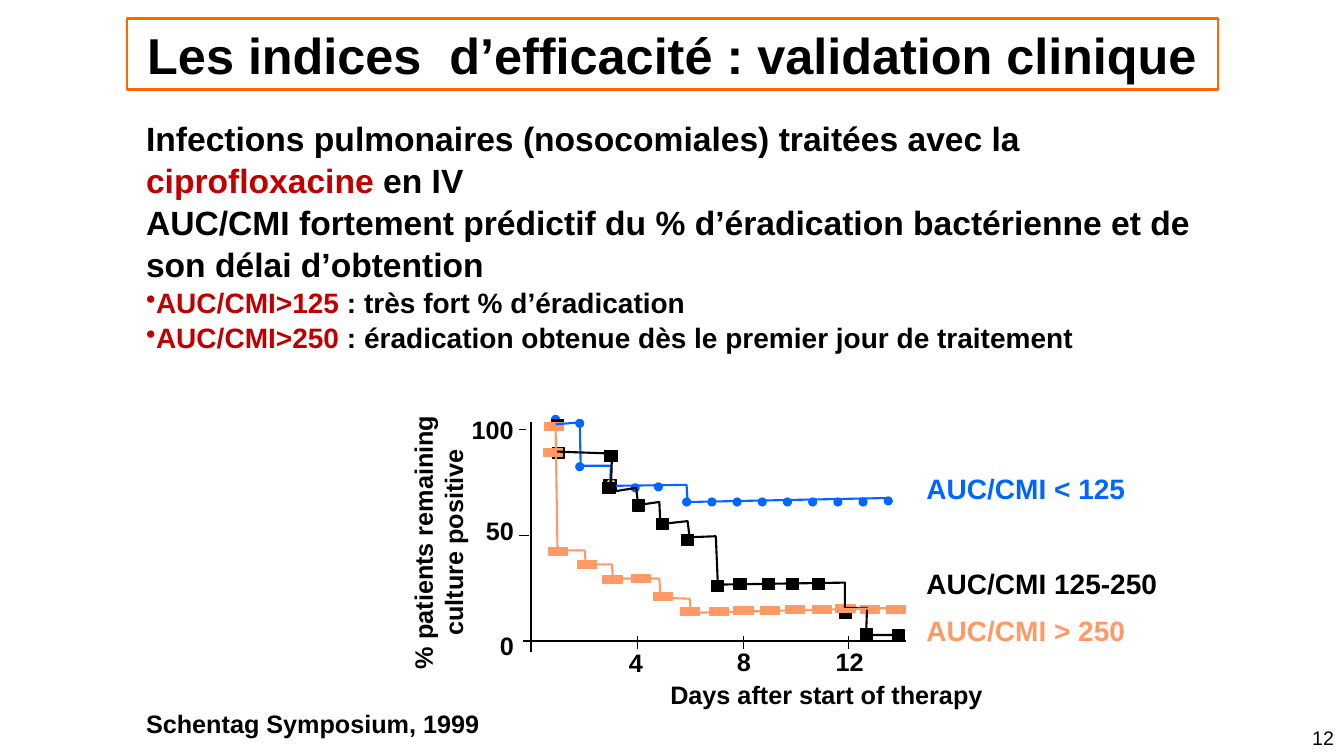
from dataclasses import dataclass
from lxml import etree
from pptx import Presentation
from pptx.dml.color import RGBColor
from pptx.enum.shapes import MSO_CONNECTOR, MSO_SHAPE
from pptx.enum.text import MSO_ANCHOR, PP_ALIGN
from pptx.oxml.ns import qn
from pptx.util import Pt

PX = 9144  # EMU per px, 100 px to the inch


@dataclass(frozen=True)
class Theme:
    font: str = "Arial"
    ink: str = "000000"
    paper: str = "FFFFFF"
    frame: str = "FF6600"
    accent: str = "C00000"
    low: str = "0066FF"
    high: str = "FF9966"
    stray: str = "FBDF53"
    title: int = 36
    body: int = 24
    bullet: int = 20
    legend: int = 20
    label: int = 18
    number: int = 14


THEME = Theme()

# Chart points, in px right of and above the origin of the axes
LOW_STEPS = [(24, 215), (48, 217), (49, 174), (79, 174), (78, 154), (154, 155),
             (155, 138), (355, 142)]
MIDDLE_STEPS = [(25, 188), (80, 186), (79, 148), (104, 152), (106, 135), (127, 138),
                (128, 116), (155, 119), (157, 103), (183, 104), (185, 56), (311, 58),
                (311, 33), (333, 33), (332, 6), (365, 6)]
HIGH_STEPS = [(24, 214), (26, 90), (53, 90), (54, 76), (80, 76), (81, 62), (127, 62),
              (128, 43), (157, 42), (158, 28), (366, 33)]
LOW_MARKS = [(24, 220), (48, 216), (48, 173), (103, 152), (126, 153),
             *((154 + 25 * day, 138) for day in range(8)), (354, 139)]
MIDDLE_MARKS = [(26, 215), (79, 184), (27, 187), (106, 135), (130, 117), (155, 101),
                (185, 55), (207, 57), (235, 57), (259, 57), (285, 57), (312, 28),
                (332, 7), (364, 6)]
HIGH_MARKS = [(21, 187), (22, 213), (26, 89), (55, 76), (80, 61), (108, 62), (130, 44),
              (157, 29), (186, 29), (210, 30), (236, 30), (261, 31), (288, 31),
              (335, 31), (361, 31), (311, 32)]


def rgb(color):
    return RGBColor.from_string(color)


def emu(*lengths):
    return [length * PX for length in lengths]


def write(paragraph, parts, size, bold=True, align=None):
    """Fill a paragraph with (text, color) parts."""
    paragraph.alignment = align
    for words, color in parts:
        run = paragraph.add_run()
        run.text = words
        run.font.name, run.font.size, run.font.bold = THEME.font, Pt(size), bold
        run.font.color.rgb = rgb(color)


def add_label(slide, box, words, size, color=THEME.ink, bold=True, align=None, wrap=False):
    label = slide.shapes.add_textbox(*emu(*box))
    label.text_frame.word_wrap = wrap
    write(label.text_frame.paragraphs[0], [(words, color)], size, bold, align)
    return label


def add_line(slide, start, end, weight):
    line = slide.shapes.add_connector(MSO_CONNECTOR.STRAIGHT, *emu(*start, *end))
    line.line.color.rgb, line.line.width = rgb(THEME.ink), Pt(weight)
    etree.SubElement(line._element.spPr, qn("a:effectLst"))


def add_marks(slide, origin, points, kind, size, color):
    width, height = size
    for right, up in points:
        left, top = origin[0] + right - width // 2, origin[1] - up - height // 2
        mark = slide.shapes.add_shape(kind, *emu(left, top, width, height))
        mark.shadow.inherit = False
        mark.fill.solid()
        mark.fill.fore_color.rgb = mark.line.color.rgb = rgb(color)
        mark.line.width = Pt(0.75)


def add_steps(slide, origin, points, color):
    corners = [(origin[0] + right, origin[1] - up) for right, up in points]
    builder = slide.shapes.build_freeform(*corners[0], scale=PX)
    builder.add_line_segments(corners[1:], close=False)
    curve = builder.convert_to_shape()
    curve.shadow.inherit = False
    curve.fill.background()
    curve.line.color.rgb, curve.line.width = rgb(color), Pt(1.5)


def add_title(slide, box):
    title = slide.shapes.add_shape(MSO_SHAPE.RECTANGLE, *emu(*box))
    title.shadow.inherit = False
    title.fill.background()
    title.line.color.rgb, title.line.width = rgb(THEME.frame), Pt(2)
    frame = title.text_frame
    frame.word_wrap, frame.vertical_anchor = True, MSO_ANCHOR.MIDDLE
    frame.margin_left = frame.margin_right = 6 * PX
    frame.margin_top = frame.margin_bottom = 5 * PX
    write(frame.paragraphs[0], [("Les indices  d’efficacité : validation clinique", THEME.ink)],
          THEME.title, align=PP_ALIGN.CENTER)


def add_findings(slide, box):
    ink, accent = THEME.ink, THEME.accent
    findings = [
        (False, [("Infections pulmonaires (nosocomiales) traitées avec la ", ink),
                 ("ciprofloxacine", accent), (" en IV", ink)]),
        (False, [("AUC/CMI fortement prédictif du % d’éradication bactérienne "
                  "et de son délai d’obtention", ink)]),
        (True, [("AUC/CMI>125", accent), (" : très fort % d’éradication", ink)]),
        (True, [("AUC/CMI>250", accent),
                (" : éradication obtenue dès le premier jour de traitement", ink)]),
    ]
    frame = slide.shapes.add_textbox(*emu(*box)).text_frame
    frame.word_wrap = True
    for index, (bulleted, parts) in enumerate(findings):
        paragraph = frame.add_paragraph() if index else frame.paragraphs[0]
        paragraph.line_spacing = 1.04
        write(paragraph, parts, THEME.bullet if bulleted else THEME.body)
        if bulleted:
            etree.SubElement(paragraph._p.get_or_add_pPr(), qn("a:buChar"), char="•")


def add_eradication_chart(slide, box):
    left, top, width, height = box
    x, y = origin = (left + 69, top + 230)
    square, dot = MSO_SHAPE.RECTANGLE, MSO_SHAPE.OVAL

    # Axes and ticks
    add_marks(slide, origin, [(78, 155)], square, (12, 11), THEME.ink)
    add_line(slide, (x, y + 11), (x, y - 217), 1.5)
    add_line(slide, (x - 8, y), (x + 372, y), 1.5)
    for step in (1, 2, 3):
        add_line(slide, (x + 105 * step, y - 5), (x + 105 * step, y + 8), 0.75)
    for step, end in ((1, -2), (2, -5)):
        add_line(slide, (x - 12, y - 105 * step), (x + end, y - 105 * step), 0.75)

    # Markers, then step curves
    add_marks(slide, origin, [(79, 156)], dot, (8, 8), THEME.stray)
    add_marks(slide, origin, LOW_MARKS, dot, (8, 8), THEME.low)
    add_marks(slide, origin, MIDDLE_MARKS, square, (12, 11), THEME.ink)
    add_marks(slide, origin, HIGH_MARKS, square, (19, 8), THEME.high)
    add_steps(slide, origin, LOW_STEPS, THEME.low)
    add_marks(slide, origin, [(77, 152)], square, (12, 11), THEME.ink)
    add_steps(slide, origin, MIDDLE_STEPS, THEME.ink)
    add_steps(slide, origin, HIGH_STEPS, THEME.high)

    # Axis labels
    for words, right, down, label_width in (
            ("100", -69, -230, 62), ("50", -55, -130, 48), ("0", -41, -16, 34),
            ("4", 87, 1, 34), ("8", 194, 0, 34), ("12", 292, 0, 48),
            ("Days after start of therapy", 128, 33, 330)):
        add_label(slide, (x + right, y + down, label_width, 40), words, THEME.label)
    percent = add_label(slide, (x - 231, y - 133, 277, 70),
                        "% patients remaining culture positive",
                        THEME.label, align=PP_ALIGN.CENTER, wrap=True)
    percent.rotation = 270

    # Curve names
    for words, down, name_width, color in (("AUC/CMI < 125", -173, 219, THEME.low),
                                           ("AUC/CMI 125-250", -79, 251, THEME.ink),
                                           ("AUC/CMI > 250", -32, 227, THEME.high)):
        name = add_label(slide, (x + 382, y + down, name_width, 44), words, THEME.legend, color)
    name.fill.solid()
    name.fill.fore_color.rgb = rgb(THEME.paper)


def add_footer(slide, box):
    left, top, width, height = box
    add_label(slide, (left, top, 351, 40), "Schentag Symposium, 1999", THEME.label)
    add_label(slide, (left + width - 344, top + 17, 344, 35), "12", THEME.number,
              bold=False, align=PP_ALIGN.RIGHT, wrap=True)


def main():
    deck = Presentation()
    deck.slide_width, deck.slide_height = emu(1333, 750)
    slide = deck.slides.add_slide(deck.slide_layouts[6])
    add_findings(slide, (135, 111, 1059, 273))
    add_eradication_chart(slide, (458, 406, 702, 303))
    add_title(slide, (126, 18, 1082, 71))
    add_footer(slide, (135, 698, 1198, 52))
    deck.save("out.pptx")


if __name__ == "__main__":
    main()
